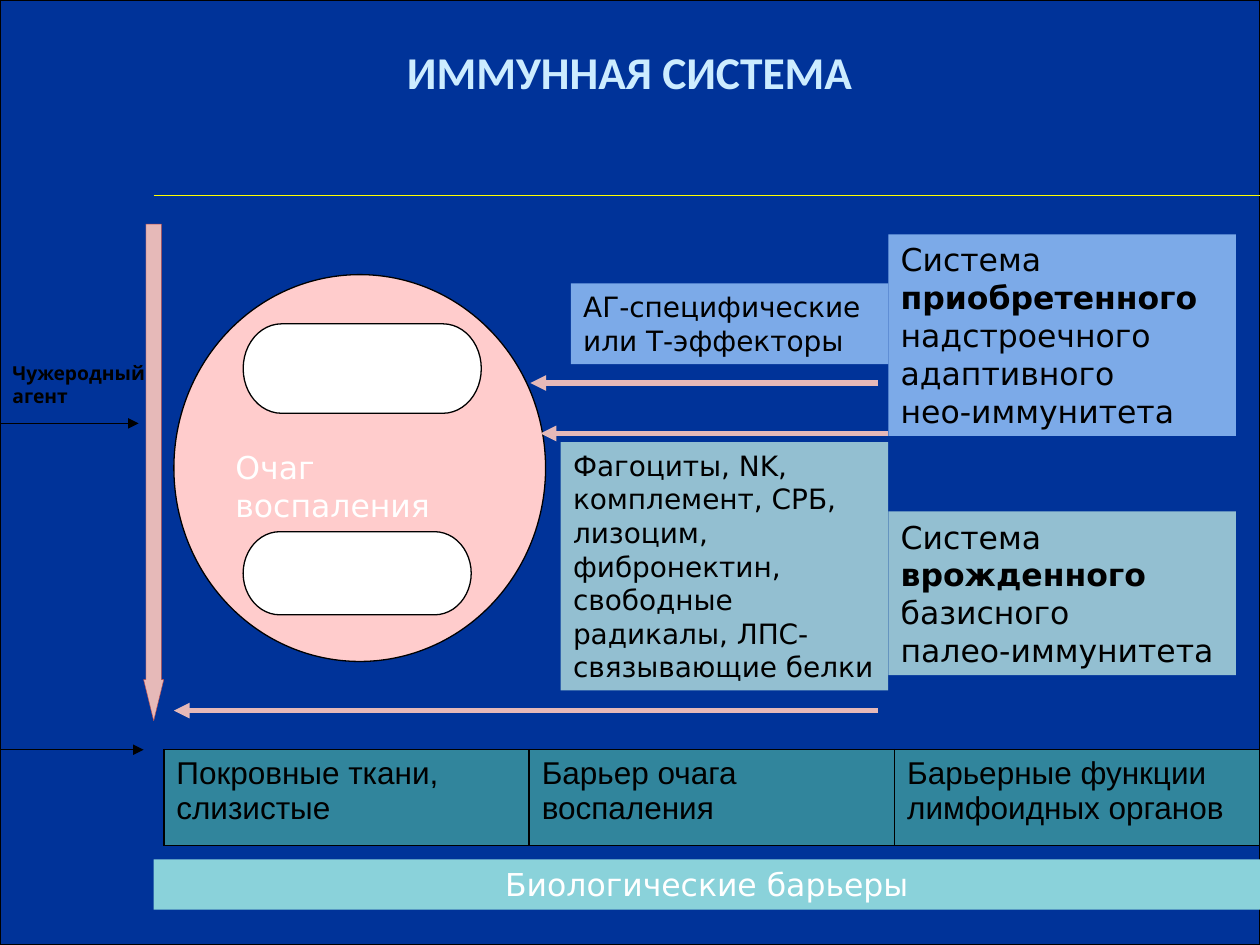
from lxml import etree
from pptx import Presentation
from pptx.dml.color import RGBColor
from pptx.enum import shapes, text
from pptx.oxml.ns import qn
from pptx.util import Inches, Pt

COLORS = {
    "back": "17375E", "panel": "003399", "title": "CCECFF", "focus": "FFCCCC",
    "acquired": "7CAAE8", "innate": "93BFD1", "barrier": "31859C",
    "band": "8AD2DA", "arrow": "E6B9B8", "edge": "C0504D",
    "rule": "FFFF00", "black": "000000", "white": "FFFFFF",
}
BODY = "DejaVu Sans"
MS = shapes.MSO_SHAPE

# Content: outlined figures (preset, box, fill)
FIGURES = [
    (MS.OVAL, (1.38, 2.18, 2.95, 3.07), "focus"),
    (MS.FLOWCHART_TERMINATOR, (1.93, 4.22, 1.81, 0.66), "white"),
    (MS.FLOWCHART_TERMINATOR, (1.93, 2.57, 1.89, 0.71), "white"),
]
# Filled text blocks (box, fill, size, paragraphs of (text, bold) runs)
BLOCKS = [
    ((7.05, 1.86, 2.76, 1.6), "acquired", 18,
     [[("Система ", False), ("приобретенного ", True), ("надстроечного адаптивного", False)],
      [("нео-иммунитета", False)]]),
    ((7.05, 4.06, 2.76, 1.3), "innate", 18,
     [[("Система ", False), ("врожденного ", True), ("базисного", False)],
      [("палео-иммунитета", False)]]),
    ((4.53, 2.25, 2.52, 0.64), "acquired", 16,
     [[("АГ-специфические или Т-эффекторы", False)]]),
    ((4.45, 3.51, 2.6, 1.97), "innate", 16,
     [[("Фагоциты, NK, комплемент, СРБ, лизоцим, фибронектин, свободные "
        "радикалы, ЛПС-связывающие белки", False)]]),
]
BARRIERS = ["Покровные ткани, слизистые", "Барьер очага воспаления",
            "Барьерные функции лимфоидных органов"]
# Horizontal lines (from x, to x, y, colour, width, arrowhead)
LINES = [
    (0, 1.1, 3.36, "black", 0.75, True),
    (0, 1.14, 5.95, "black", 0.75, True),
    (7.05, 4.29, 3.44, "arrow", 3, True),
    (6.97, 4.21, 3.04, "arrow", 3, True),
    (6.97, 1.38, 5.64, "arrow", 3, True),
    (1.22, 10, 1.55, "rule", 0.75, False),
]


def rgb(name):
    return RGBColor.from_string(COLORS[name])


def style(font, size, color="black", name=BODY, bold=None):
    font.size, font.name, font.bold = Pt(size), name, bold
    font.color.rgb = rgb(color)


def add_figure(slide, preset, box, fill, line=None, width=0.75):
    sp = slide.shapes.add_shape(preset, *map(Inches, box))
    sp.shadow.inherit = False
    sp.fill.solid()
    sp.fill.fore_color.rgb = rgb(fill)
    if line:
        sp.line.color.rgb = rgb(line)
        sp.line.width = Pt(width)
    else:
        sp.line.fill.background()
    return sp


def write(sp, paragraphs, size, color="black", name=BODY, bold=None,
          align=text.PP_ALIGN.LEFT, anchor=text.MSO_ANCHOR.TOP):
    tf = sp.text_frame
    tf.word_wrap = True
    tf.vertical_anchor = anchor
    for i, runs in enumerate(paragraphs):
        p = tf.add_paragraph() if i else tf.paragraphs[0]
        p.alignment = align
        style(p.font, size, color, name, bold)
        for words, strong in runs:
            r = p.add_run()
            r.text = words
            if strong:
                r.font.bold = True


def add_label(slide, box, words, *args, **kwargs):
    sp = slide.shapes.add_textbox(*map(Inches, box))
    write(sp, [[(words, False)]], *args, **kwargs)


def add_line(slide, x1, x2, y, color, width, arrow):
    line = slide.shapes.add_connector(
        shapes.MSO_CONNECTOR.STRAIGHT, Inches(x1), Inches(y), Inches(x2), Inches(y))
    line.line.color.rgb = rgb(color)
    line.line.width = Pt(width)
    if arrow:
        etree.SubElement(line.line._get_or_add_ln(), qn("a:tailEnd"), type="triangle")
    etree.SubElement(line._element.spPr, qn("a:effectLst"))


def add_borders(cell):
    tc_pr = cell._tc.get_or_add_tcPr()
    for i, side in enumerate(("lnL", "lnR", "lnT", "lnB")):
        ln = etree.Element(qn("a:" + side), w=str(Pt(1)))
        fill = etree.SubElement(ln, qn("a:solidFill"))
        etree.SubElement(fill, qn("a:srgbClr"), val=COLORS["black"])
        tc_pr.insert(i, ln)


def add_barriers(slide):
    frame = slide.shapes.add_table(
        1, len(BARRIERS), Inches(1.3), Inches(5.95), Inches(8.7), Inches(0.76))
    table = frame.table
    for col, (cell, words) in enumerate(zip(table.rows[0].cells, BARRIERS)):
        table.columns[col].width = Inches(8.7 / len(BARRIERS))
        cell.text = words
        style(cell.text_frame.paragraphs[0].font, 18, name="Arial", bold=False)
        cell.fill.solid()
        cell.fill.fore_color.rgb = rgb("barrier")
        add_borders(cell)


def main():
    prs = Presentation()
    prs.slide_width, prs.slide_height = Inches(10), Inches(7.5)
    slide = prs.slides.add_slide(prs.slide_layouts[6])
    slide.background.fill.solid()
    slide.background.fill.fore_color.rgb = rgb("back")
    center = text.PP_ALIGN.CENTER

    # Panel and title
    add_figure(slide, MS.FLOWCHART_PROCESS, (0, 0, 10, 7.5), "panel", "black")
    add_label(slide, (0.43, 0.21, 9.14, 0.71), "ИММУННАЯ СИСТЕМА", 26, "title",
              "Calibri", True, center, text.MSO_ANCHOR.MIDDLE)

    # Inflammation focus and immunity blocks
    for preset, box, fill in FIGURES:
        add_figure(slide, preset, box, fill, "black")
    for box, fill, size, paragraphs in BLOCKS:
        write(add_figure(slide, MS.RECTANGLE, box, fill), paragraphs, size)

    # Barriers
    add_barriers(slide)
    band = add_figure(slide, MS.RECTANGLE, (1.22, 6.82, 8.78, 0.4), "band")
    write(band, [[("Биологические барьеры", False)]], 18, "white", align=center)

    # Labels, down arrow and lines
    add_label(slide, (1.77, 3.51, 2.22, 0.4), "Очаг воспаления", 18, "white")
    down = add_figure(slide, MS.DOWN_ARROW, (1.14, 1.78, 0.16, 3.94), "arrow", "edge", 0.25)
    down.adjustments[0], down.adjustments[1] = 0.76, 2.04
    add_label(slide, (0, 2.41, 1.3, 0.87), "Чужеродный агент", 11, name="Karla",
              bold=True, anchor=text.MSO_ANCHOR.BOTTOM)
    for line in LINES:
        add_line(slide, *line)

    prs.save("out.pptx")


if __name__ == "__main__":
    main()
